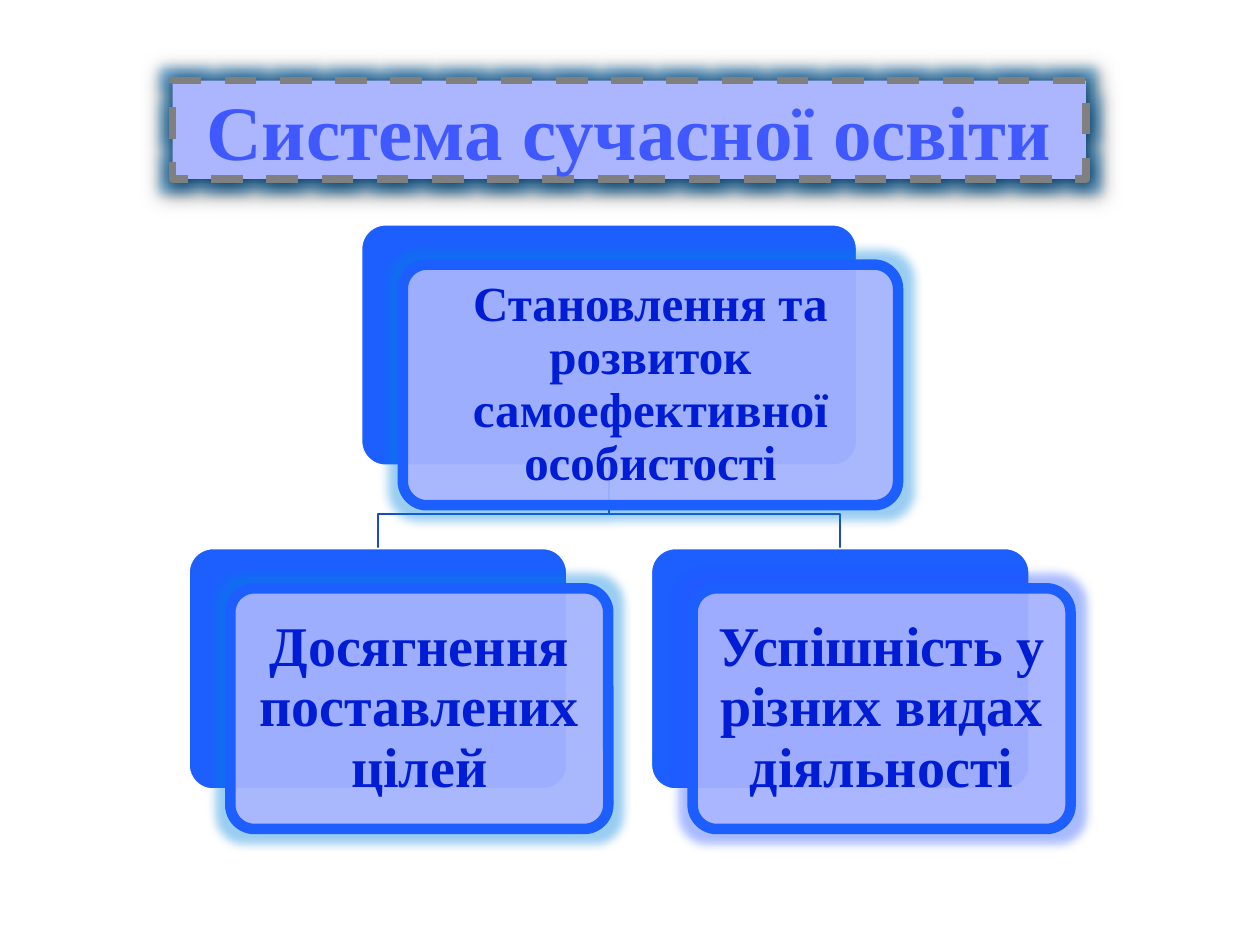
from dataclasses import dataclass

import pptx
import pptx.dml.color
import pptx.enum.dml
import pptx.enum.shapes
import pptx.enum.text
import pptx.oxml.ns
import pptx.oxml.xmlchemy
import pptx.util
from lxml import etree

Pt = pptx.util.Pt
qn = pptx.oxml.ns.qn


@dataclass(frozen=True)
class Theme:
    font: str = "Times New Roman"
    title_size: float = 44
    top_size: float = 28
    child_size: float = 32
    title_text: str = "4059FF"
    card_text: str = "001CD5"
    pale: str = "ABB6FF"
    strong: str = "1D5EFF"
    branch: str = "174BCC"
    dash: str = "808080"
    white: str = "FFFFFF"
    shadow: str = "000000"
    sky_glow: str = "0282DE"
    blue_glow: str = "2855FF"


@dataclass(frozen=True)
class Card:
    text: str
    left: float
    top: float
    width: float
    size: float
    glow: str

    @property
    def center(self) -> float:
        return self.left + self.width / 2


THEME = Theme()
CARD_HEIGHT = 137.5
OFFSET_X, OFFSET_Y = 23.6, 22.8
BRANCH_Y = 293.6
GLOW_RADIUS = 11

TOP_CARD = Card("Становлення та розвиток самоефективної особистості",
                206.6, 128.4, 283, THEME.top_size, THEME.sky_glow)
CHILD_CARDS = [
    Card("Досягнення поставлених цілей",
         108, 313.4, 216, THEME.child_size, THEME.sky_glow),
    Card("Успішність у різних видах діяльності",
         372.2, 313.4, 216, THEME.child_size, THEME.blue_glow),
]


def rgb(value: str) -> pptx.dml.color.RGBColor:
    return pptx.dml.color.RGBColor.from_string(value)


def paint(sp, fill: str, line: str, width: float) -> None:
    sp.fill.solid()
    sp.fill.fore_color.rgb = rgb(fill)
    sp.line.color.rgb = rgb(line)
    sp.line.width = Pt(width)
    sp.shadow.inherit = False


def add_color(parent, value: str, alpha: int) -> None:
    """Append a colour with its opacity in percent to an effect element."""
    color = etree.SubElement(parent, qn("a:srgbClr"), val=value)
    etree.SubElement(color, qn("a:alpha"), val=str(alpha * 1000))


def add_glow(sp, color: str, alpha: int = 40) -> None:
    effects = sp.element.spPr.find(qn("a:effectLst"))
    glow = etree.SubElement(effects, qn("a:glow"), rad=str(Pt(GLOW_RADIUS)))
    add_color(glow, color, alpha)


def add_drop_shadow(sp, color: str) -> None:
    effects = sp.element.spPr.find(qn("a:effectLst"))
    shadow = etree.SubElement(effects, qn("a:outerShdw"), blurRad=str(Pt(8.5)),
                              dist=str(Pt(1)), dir="5400000",
                              algn="ctr", rotWithShape="0")
    add_color(shadow, color, 100)


def set_text(sp, text: str, size: float, color: str) -> None:
    tf = sp.text_frame
    tf.text = text
    tf.word_wrap = True
    tf.vertical_anchor = pptx.enum.text.MSO_ANCHOR.MIDDLE
    p = tf.paragraphs[0]
    p.alignment = pptx.enum.text.PP_ALIGN.CENTER
    font = p.runs[0].font
    font.name, font.size, font.bold = THEME.font, Pt(size), True
    font.color.rgb = rgb(color)


def draw_title(s, text: str) -> None:
    sp = s.shapes.title
    sp.left, sp.top, sp.width, sp.height = Pt(98.6), Pt(46), Pt(522), Pt(56.2)
    paint(sp, THEME.pale, THEME.dash, 4.5)
    sp.line.dash_style = pptx.enum.dml.MSO_LINE.DASH
    add_glow(sp, THEME.sky_glow)
    add_drop_shadow(sp, THEME.shadow)
    set_text(sp, text, THEME.title_size, THEME.title_text)


def draw_branch(s, parent: Card, child: Card) -> None:
    start = parent.top + CARD_HEIGHT
    builder = s.shapes.build_freeform(Pt(parent.center), Pt(start))
    builder.add_line_segments([
        (Pt(parent.center), Pt(BRANCH_Y)),
        (Pt(child.center), Pt(BRANCH_Y)),
        (Pt(child.center), Pt(child.top)),
    ], close=False)
    sp = builder.convert_to_shape()
    sp.fill.background()
    sp.line.color.rgb = rgb(THEME.branch)
    sp.line.width = Pt(1)
    sp.shadow.inherit = False


def add_panel(s, left: float, top: float, width: float):
    sp = s.shapes.add_shape(pptx.enum.shapes.MSO_SHAPE.ROUNDED_RECTANGLE,
                            Pt(left), Pt(top), Pt(width), Pt(CARD_HEIGHT))
    sp.adjustments[0] = 0.1
    return sp


def draw_card(s, card: Card) -> None:
    """Draw a solid panel with a translucent text panel shifted over it."""
    back = add_panel(s, card.left, card.top, card.width)
    paint(back, THEME.strong, THEME.white, 1)

    front = add_panel(s, card.left + OFFSET_X, card.top + OFFSET_Y, card.width)
    paint(front, THEME.pale, THEME.strong, 6)
    fill = front.element.spPr.find(qn("a:solidFill")).find(qn("a:srgbClr"))
    etree.SubElement(fill, qn("a:alpha"), val="90000")
    add_glow(front, card.glow)
    set_text(front, card.text, card.size, THEME.card_text)
    tf = front.text_frame
    tf.margin_left = tf.margin_right = Pt(card.size * 0.3)
    tf.margin_top = tf.margin_bottom = Pt(card.size * 0.3)
    tf.paragraphs[0].line_spacing = 0.9


def main() -> None:
    prs = pptx.Presentation()
    prs.slide_width, prs.slide_height = Pt(720), Pt(540)
    s = prs.slides.add_slide(prs.slide_layouts[5])
    draw_title(s, "Система сучасної освіти")
    for child in CHILD_CARDS:
        draw_branch(s, TOP_CARD, child)
    for card in [TOP_CARD, *CHILD_CARDS]:
        draw_card(s, card)
    prs.save("out.pptx")


if __name__ == "__main__":
    main()
